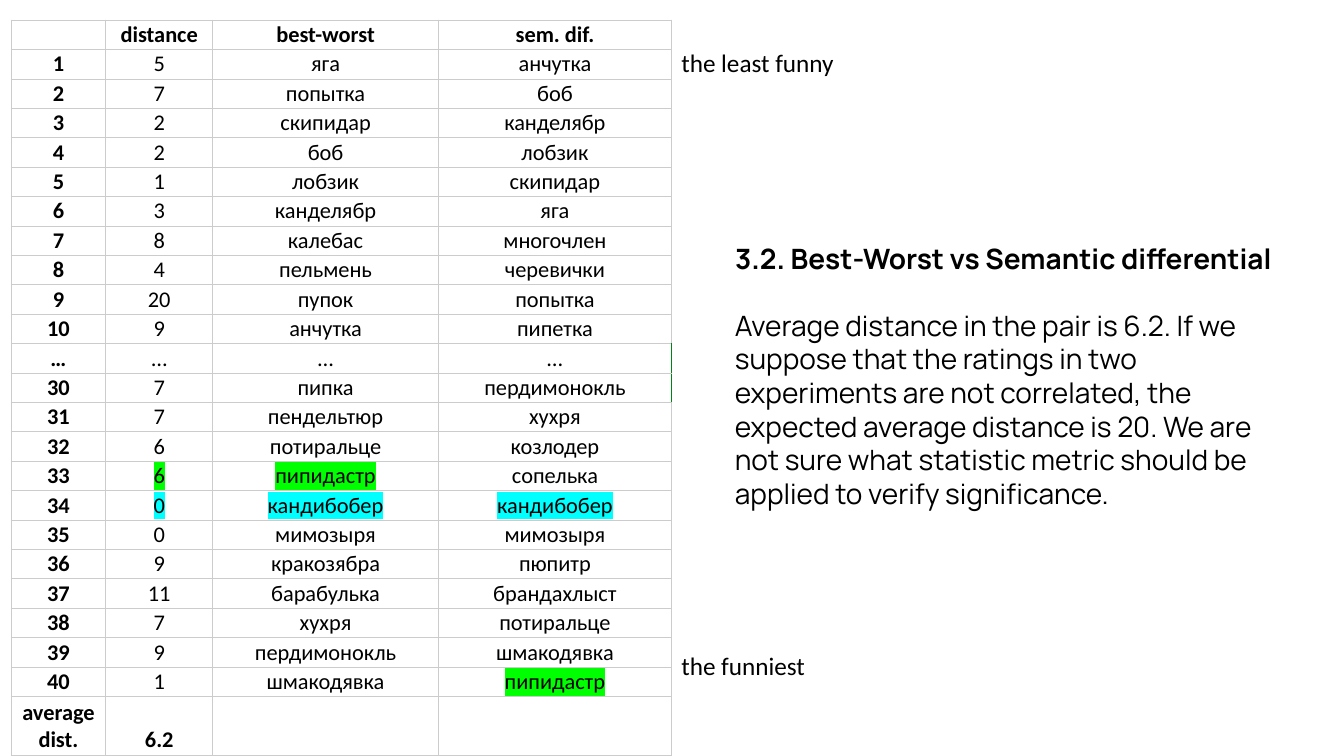
import pptx
import pptx.util
import pptx.dml.color
import pptx.enum.text
import pptx.oxml
import pptx.oxml.ns

WIDE, HIGH = 13.33, 7.5
INK, GRID, EDGE = "000000", "CCCCCC", "008418"
LIME, AQUA = "00FF00", "00FFFF"

ROWS = [
    ("", "distance", "best-worst", "sem. dif."),
    ("1", "5", "яга", "анчутка"),
    ("2", "7", "попытка", "боб"),
    ("3", "2", "скипидар", "канделябр"),
    ("4", "2", "боб", "лобзик"),
    ("5", "1", "лобзик", "скипидар"),
    ("6", "3", "канделябр", "яга"),
    ("7", "8", "калебас", "многочлен"),
    ("8", "4", "пельмень", "черевички"),
    ("9", "20", "пупок", "попытка"),
    ("10", "9", "анчутка", "пипетка"),
    ("…", "…", "…", "…"),
    ("30", "7", "пипка", "пердимонокль"),
    ("31", "7", "пендельтюр", "хухря"),
    ("32", "6", "потиральце", "козлодер"),
    ("33", "6", "пипидастр", "сопелька"),
    ("34", "0", "кандибобер", "кандибобер"),
    ("35", "0", "мимозыря", "мимозыря"),
    ("36", "9", "кракозябра", "пюпитр"),
    ("37", "11", "барабулька", "брандахлыст"),
    ("38", "7", "хухря", "потиральце"),
    ("39", "9", "пердимонокль", "шмакодявка"),
    ("40", "1", "шмакодявка", "пипидастр"),
    ("average dist.", "6.2", "", ""),
]
COLS = [0.94, 1.06, 2.24, 2.31]
LEFT, TOP, STEP = 0.11, 0.2, 0.29
MARKS = {("33", 1): LIME, ("33", 2): LIME, ("40", 3): LIME,
         ("34", 1): AQUA, ("34", 2): AQUA, ("34", 3): AQUA}
EDGES = {("…", 3), ("30", 3)}

TITLE = "3.2. Best-Worst vs Semantic differential"
BODY = ("Average distance in the pair is 6.2. If we suppose that the ratings in two "
        "experiments are not correlated, the expected average distance is 20. We are "
        "not sure what statistic metric should be applied to verify significance.")
SIDE, WIDTH, HEAD, LINE = 7.19, 5.76, 2.35, 0.33
NOTES = [("the least funny", 0.42, 1.73), ("the funniest", 6.4, 1.44)]

ALIGN = pptx.enum.text.PP_ALIGN
ANCHOR = pptx.enum.text.MSO_ANCHOR
CELL = {"vertical_anchor": ANCHOR.BOTTOM, "margin_left": 9144, "margin_right": 9144,
        "margin_top": 9144, "margin_bottom": 9144}


def inch(size):
    return pptx.util.Inches(size)


def tint(code):
    return pptx.dml.color.RGBColor.from_string(code)


def apply(item, style):
    for name, value in style.items():
        setattr(item, name, value)


def write(para, text, face, size, bold=False):
    run = para.add_run()
    run.text = text
    apply(run.font, {"name": face, "size": pptx.util.Pt(size), "bold": bold})
    run.font.color.rgb = tint(INK)
    return run


def node(parent, tag, **attrs):
    child = parent.makeelement(pptx.oxml.ns.qn(tag), attrs)
    parent.append(child)
    return child


def mark(run, code):
    props = run._r.get_or_add_rPr()
    light = node(props, "a:highlight")
    node(light, "a:srgbClr", val=code)
    props.find(pptx.oxml.ns.qn("a:solidFill")).addnext(light)


def border(cell, right):
    props = cell._tc.get_or_add_tcPr()
    for side in "LRTB":
        line = node(props, "a:ln" + side, w="9525")
        fill = node(line, "a:solidFill")
        node(fill, "a:srgbClr", val=right if side == "R" else GRID)


def place(shape, left, top, width, height, wrap=True):
    apply(shape, {"left": inch(left), "top": inch(top),
                  "width": inch(width), "height": inch(height)})
    apply(shape.text_frame, {"word_wrap": wrap, "vertical_anchor": ANCHOR.TOP,
                             "auto_size": pptx.enum.text.MSO_AUTO_SIZE.NONE})
    para = shape.text_frame.paragraphs[0]
    para.alignment = ALIGN.LEFT
    return para


def box(slide, *area, wrap=True):
    return place(slide.shapes.add_textbox(0, 0, 0, 0), *area, wrap=wrap)


def rank(slide):
    high = STEP * (len(ROWS) + 1)
    table = slide.shapes.add_table(len(ROWS), len(COLS), inch(LEFT), inch(TOP),
                                   inch(sum(COLS)), inch(high)).table
    apply(table, {"first_row": False, "horz_banding": False})
    for col, width in zip(table.columns, COLS):
        col.width = inch(width)
    last = len(ROWS) - 1
    for y, row in enumerate(ROWS):
        table.rows[y].height = inch(STEP * 2 if y == last else STEP)
        for x, text in enumerate(row):
            cell, key = table.cell(y, x), (row[0], x)
            apply(cell, CELL)
            border(cell, EDGE if key in EDGES else GRID)
            cell.fill.background()
            para = cell.text_frame.paragraphs[0]
            para.alignment = ALIGN.CENTER
            if not text:
                node(para._p, "a:endParaRPr", sz="1600")
                continue
            run = write(para, text, "Calibri", 16, x == 0 or y in (0, last))
            if key in MARKS:
                mark(run, MARKS[key])


def main():
    deck = pptx.Presentation()
    apply(deck, {"slide_width": inch(WIDE), "slide_height": inch(HIGH)})
    slide = deck.slides.add_slide(deck.slide_layouts[5])
    rank(slide)
    head = place(slide.shapes.title, SIDE, HEAD, WIDTH, LINE + 0.1)
    write(head, TITLE, "Manrope", 20, True)
    body = box(slide, SIDE, HEAD + 2 * LINE, WIDTH, 6 * LINE + 0.1)
    write(body, BODY, "Manrope", 20)
    for text, top, width in NOTES:
        write(box(slide, LEFT + sum(COLS), top, width, 0.4, wrap=False), text, "Calibri", 18)
    deck.save("out.pptx")


if __name__ == "__main__":
    main()
